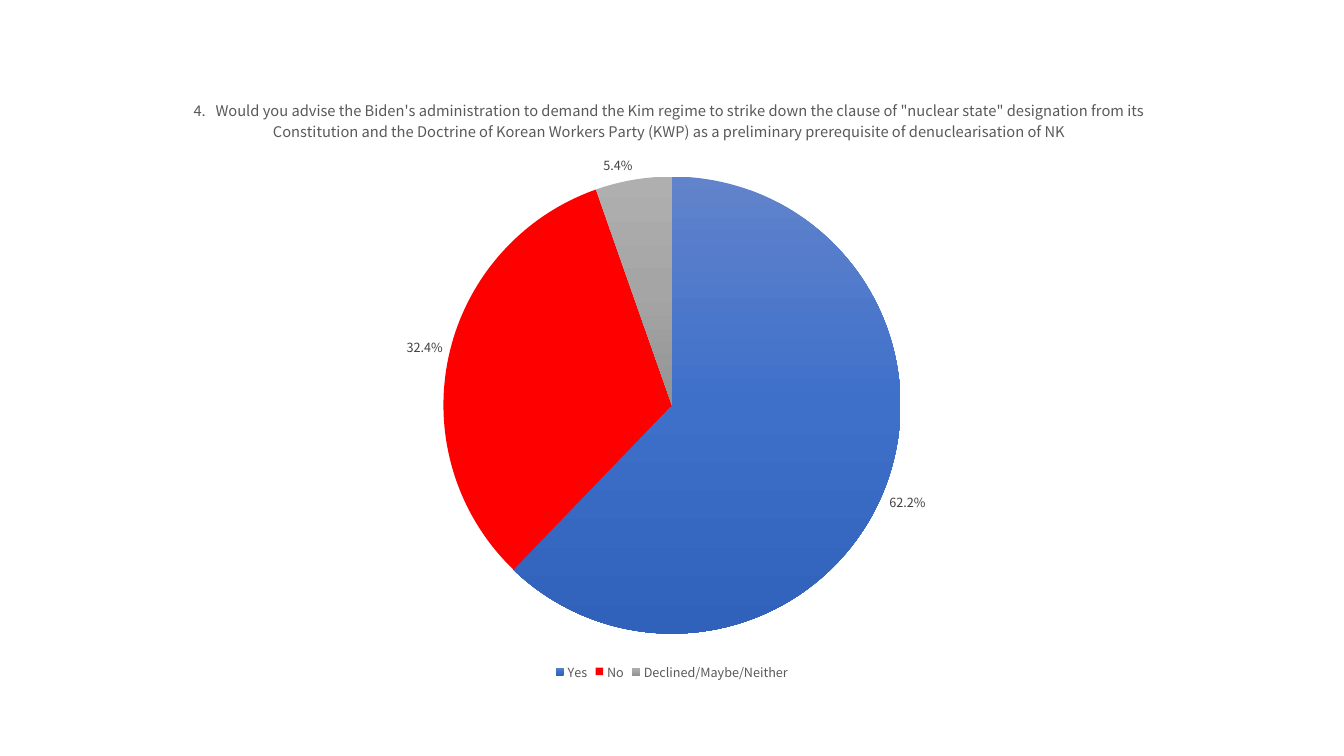
from dataclasses import dataclass

from pptx import Presentation
from pptx.chart.data import CategoryChartData
from pptx.dml.color import RGBColor
from pptx.enum.chart import XL_CHART_TYPE, XL_LABEL_POSITION, XL_LEGEND_POSITION
from pptx.oxml import parse_xml
from pptx.oxml.ns import nsdecls, qn
from pptx.util import Pt

QUESTION = (
    "4.   Would you advise the Biden's administration to demand the Kim regime to "
    'strike down the clause of "nuclear state" designation from its Constitution '
    "and the Doctrine of Korean Workers Party (KWP) as a preliminary prerequisite "
    "of denuclearisation of NK"
)
ANSWERS = {"Yes": 0.622, "No": 0.324, "Declined/Maybe/Neither": 0.054}


@dataclass(frozen=True)
class Theme:
    font: str = "Noto Sans CJK KR"
    muted: str = "595959"
    label: str = "404040"
    title_size: float = 10.5
    small_size: float = 9
    # One tuple per answer: a single colour is solid, several run top to bottom
    slices: tuple = (
        ("6183CB", "3E70CA", "3062BB"),
        ("FF0000",),
        ("AFAFAF", "A5A5A5", "939393"),
    )


THEME = Theme()
SLIDE_WIDTH, SLIDE_HEIGHT = 960, 540
MARGIN_X, MARGIN_Y = 50.4, 50.4
CHART_HEIGHT = 438.5

# Shares of the chart's width and height
TITLE_PLACE = {"x": 0.1, "y": 0.04}
PIE_PLACE = {"x": 0.31, "y": 0.17, "w": 0.38, "h": 0.75}


def style_font(font, size, color):
    values = {"name": THEME.font, "size": Pt(size), "bold": False}
    for name, value in values.items():
        setattr(font, name, value)
    font.color.rgb = RGBColor.from_string(color)


def place(parent, position, before, inner=False):
    """Give a chart part a manual layout, set in front of the named child."""
    for old in parent.findall(qn("c:layout")):
        parent.remove(old)
    target = '<c:layoutTarget val="inner"/>' if inner else ""
    modes = "".join(f'<c:{key}Mode val="edge"/>' for key in "xy")
    sizes = "".join(f'<c:{key} val="{value}"/>' for key, value in position.items())
    layout = parse_xml(
        f'<c:layout {nsdecls("c")}><c:manualLayout>{target}{modes}{sizes}'
        "</c:manualLayout></c:layout>"
    )
    parent.find(qn(before)).addprevious(layout)


def gradient_fill(colors):
    step = 100000 // (len(colors) - 1)
    stops = "".join(
        f'<a:gs pos="{index * step}"><a:srgbClr val="{color}"/></a:gs>'
        for index, color in enumerate(colors)
    )
    return parse_xml(
        f'<a:gradFill {nsdecls("a")} rotWithShape="1"><a:gsLst>{stops}</a:gsLst>'
        '<a:lin ang="5400000" scaled="0"/></a:gradFill>'
    )


def color_slices(series):
    for index, colors in enumerate(THEME.slices):
        look = series.points[index].format
        look.fill.solid()
        look.fill.fore_color.rgb = RGBColor.from_string(colors[0])
        look.line.fill.background()
        if len(colors) > 1:
            properties = series._element.findall(qn("c:dPt"))[index].find(qn("c:spPr"))
            solid = properties.find(qn("a:solidFill"))
            properties.replace(solid, gradient_fill(colors))


def add_answer_chart(page):
    data = CategoryChartData(number_format="0.0%")
    data.categories = list(ANSWERS)
    data.add_series("Series 1", list(ANSWERS.values()))
    chart = page.shapes.add_chart(
        XL_CHART_TYPE.PIE, Pt(MARGIN_X), Pt(MARGIN_Y),
        Pt(SLIDE_WIDTH - 2 * MARGIN_X), Pt(CHART_HEIGHT), data,
    ).chart
    chart.font.name = THEME.font
    chart.font.size = Pt(10)

    chart.has_title = True
    para = chart.chart_title.text_frame.paragraphs[0]
    span = para.add_run()
    span.text = QUESTION
    for font in (para.font, span.font):
        style_font(font, THEME.title_size, THEME.muted)
    chart.chart_title.include_in_layout = False

    chart.has_legend = True
    legend = chart.legend
    legend.position = XL_LEGEND_POSITION.BOTTOM
    legend.include_in_layout = False
    style_font(legend.font, THEME.small_size, THEME.muted)

    plot = chart.plots[0]
    plot.vary_by_categories = True
    plot.has_data_labels = True
    label_format = {
        "show_value": True,
        "show_percentage": False,
        "number_format": "0.0%",
        "number_format_is_linked": False,
        "position": XL_LABEL_POSITION.OUTSIDE_END,
    }
    for name, value in label_format.items():
        setattr(plot.data_labels, name, value)
    style_font(plot.data_labels.font, THEME.small_size, THEME.label)
    color_slices(plot.series[0])

    chart_xml = chart._chartSpace.find(qn("c:chart"))
    place(chart_xml.find(qn("c:title")), TITLE_PLACE, "c:overlay")
    place(chart_xml.find(qn("c:plotArea")), PIE_PLACE, "c:pieChart", inner=True)


def main():
    deck = Presentation()
    deck.slide_width, deck.slide_height = Pt(SLIDE_WIDTH), Pt(SLIDE_HEIGHT)
    page = deck.slides.add_slide(deck.slide_layouts[6])
    add_answer_chart(page)
    deck.save("out.pptx")


if __name__ == "__main__":
    main()
